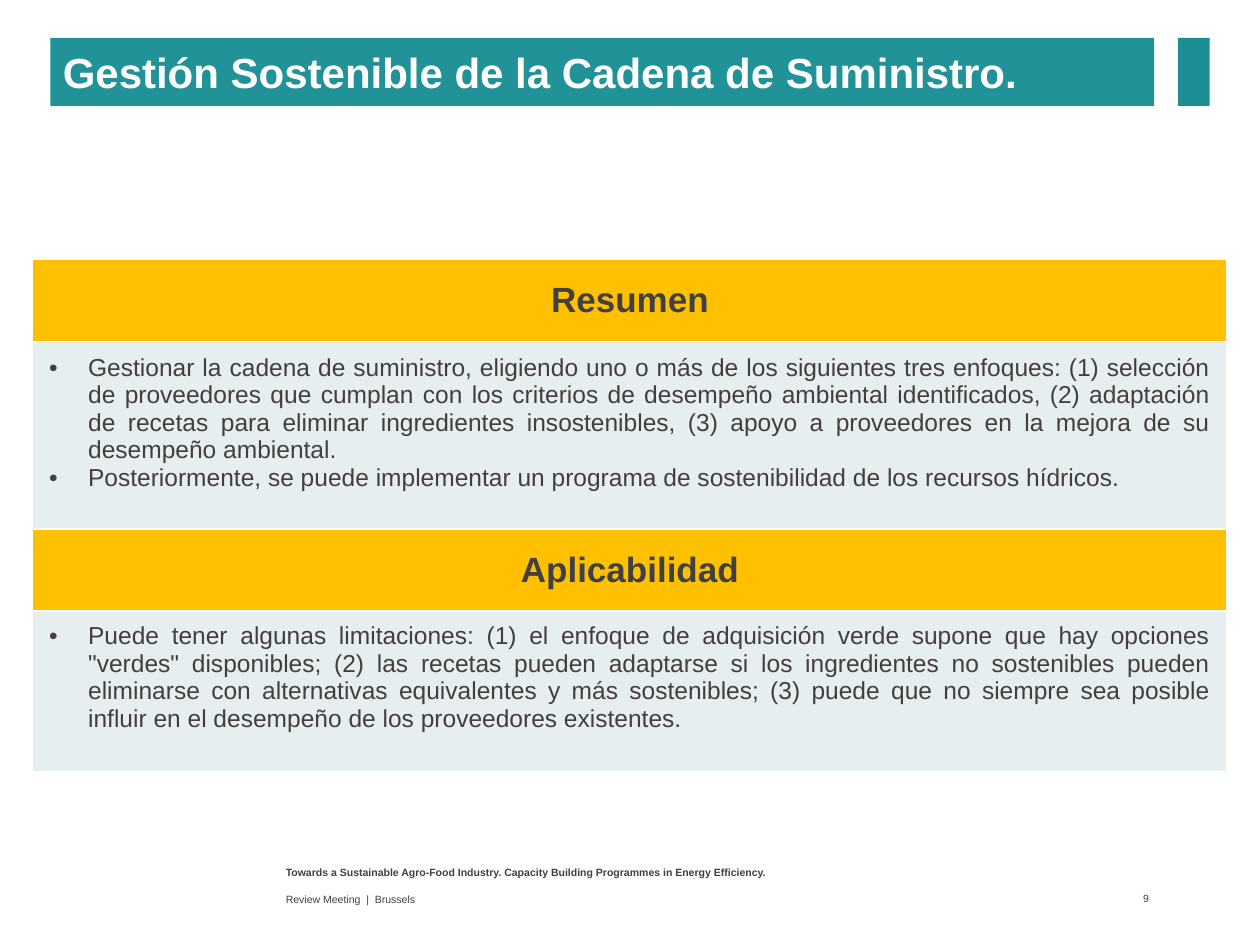
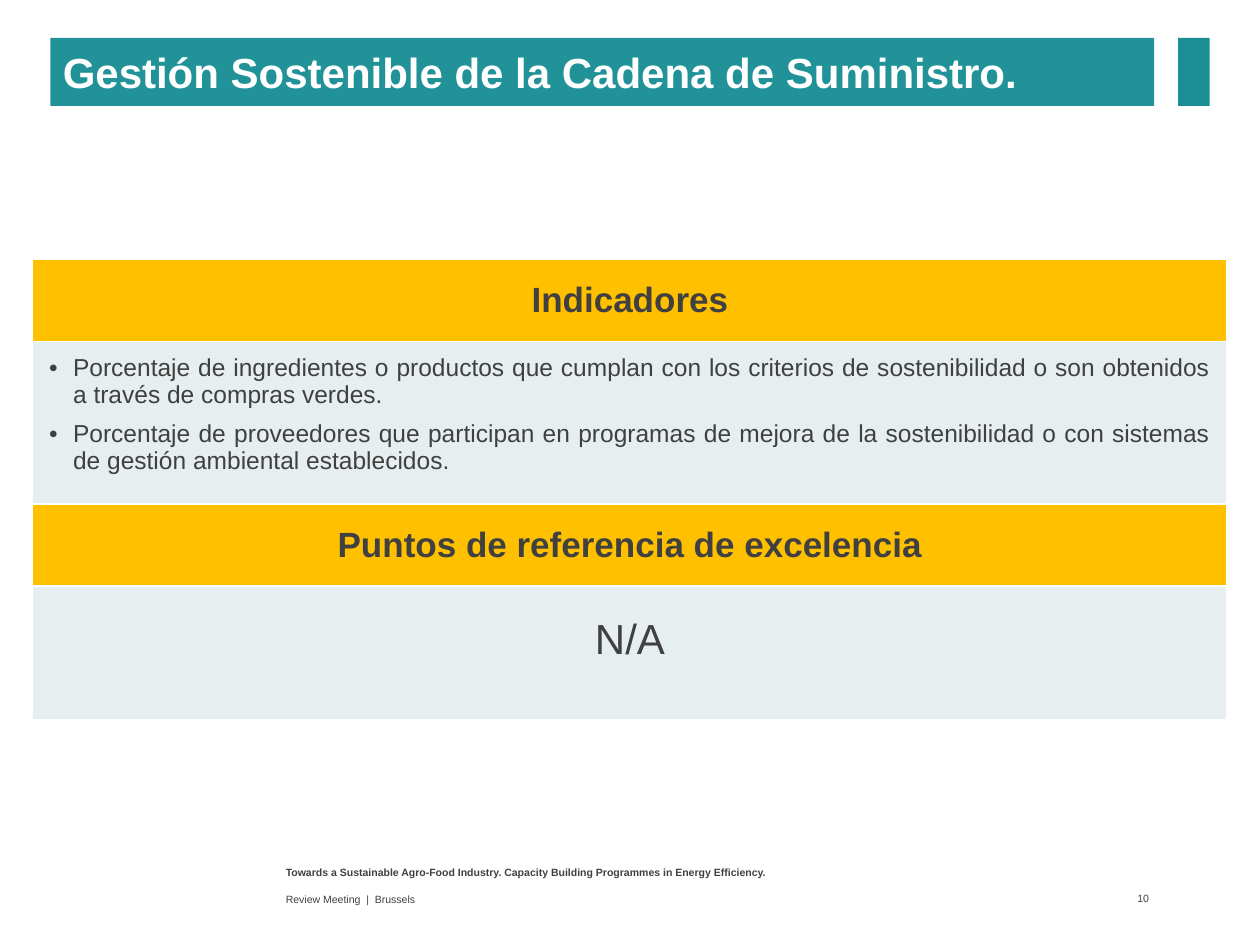
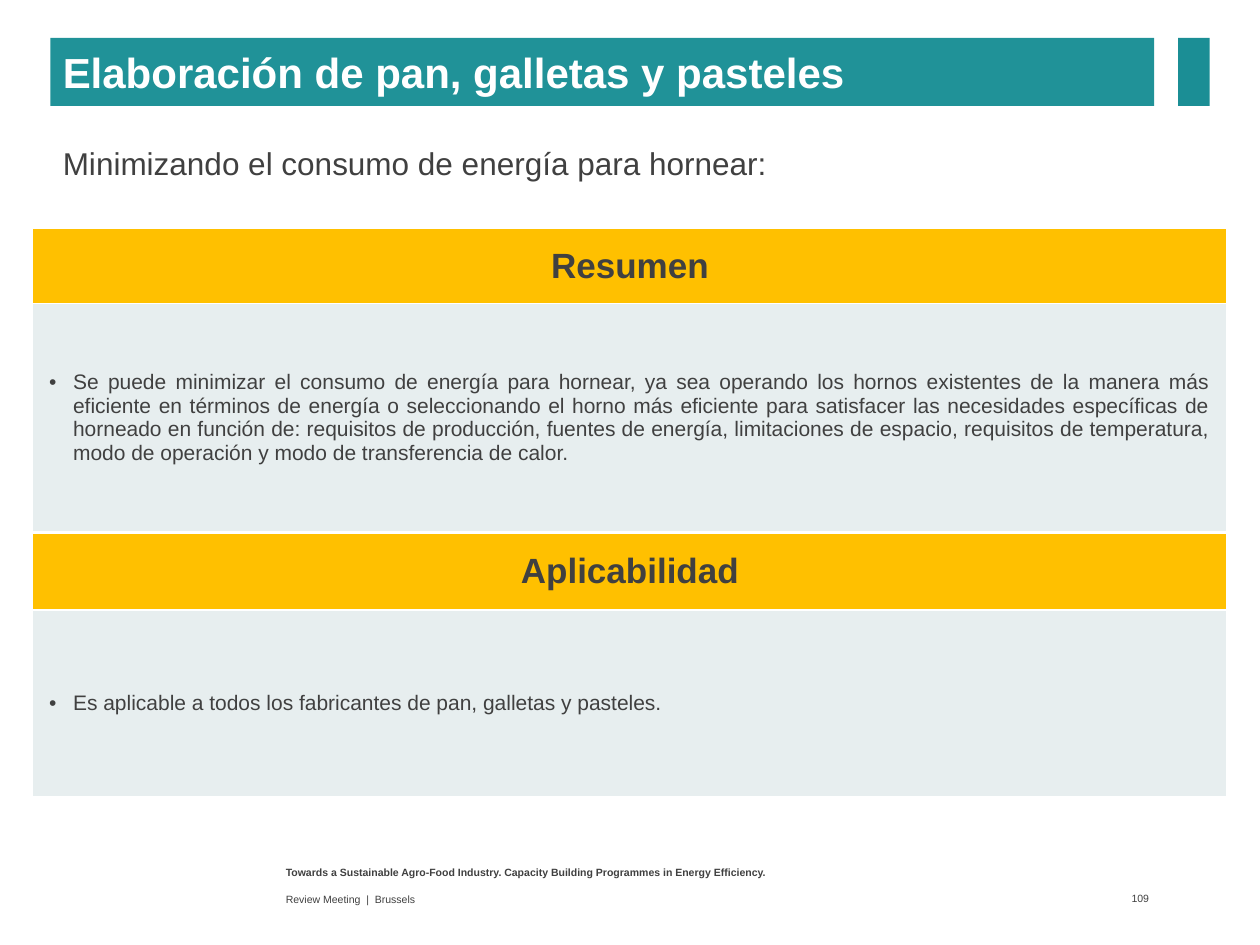
"""Build three slides on best environmental practices for the food industry."""
from dataclasses import dataclass

from lxml import etree
from pptx import Presentation
from pptx.dml.color import RGBColor
from pptx.enum.shapes import MSO_SHAPE
from pptx.enum.text import MSO_ANCHOR, PP_ALIGN
from pptx.oxml.ns import qn
from pptx.util import Inches, Pt

RECT = MSO_SHAPE.RECTANGLE
TOP, MIDDLE = MSO_ANCHOR.TOP, MSO_ANCHOR.MIDDLE
LEFT, CENTER, RIGHT, JUSTIFY = PP_ALIGN.LEFT, PP_ALIGN.CENTER, PP_ALIGN.RIGHT, PP_ALIGN.JUSTIFY


@dataclass(frozen=True)
class Theme:
    font: str = "Arial"
    text: str = "404040"
    white: str = "FFFFFF"
    band: str = "209298"
    accent: str = "1B8E95"
    heading_fill: str = "FFC000"
    body_fill: str = "E7EEEF"
    title_size: int = 24
    heading_size: int = 20
    subtitle_size: int = 18
    footer_size: int = 6


THEME = Theme()
TABLE_LEFT, TABLE_WIDTH = 0.26, 9.48
PROJECT = "Towards a Sustainable Agro-Food Industry. Capacity Building Programmes in Energy Efficiency."
MEETING = "Review Meeting  |  Brussels"
SUPPLY_TITLE = "Gestión Sostenible de la Cadena de Suministro."

SLIDES = [
    {
        "number": "9",
        "title": SUPPLY_TITLE,
        "tables": [
            {
                "heading": "Resumen", "top": 2.06, "rows": (0.65, 1.43),
                "size": 14, "indent": 0.31, "after": 0, "gap": 0.22,
                "body": [
                    "Gestionar la cadena de suministro, eligiendo uno o más de los siguientes tres "
                    "enfoques: (1) selección de proveedores que cumplan con los criterios de desempeño "
                    "ambiental identificados, (2) adaptación de recetas para eliminar ingredientes "
                    "insostenibles, (3) apoyo a proveedores en la mejora de su desempeño ambiental.",
                    "Posteriormente, se puede implementar un programa de sostenibilidad de los "
                    "recursos hídricos.",
                ],
            },
            {
                "heading": "Aplicabilidad", "top": 4.2, "rows": (0.65, 1.21),
                "size": 14, "indent": 0.31, "after": 0, "gap": 0.22,
                "body": [
                    "Puede tener algunas limitaciones: (1) el enfoque de adquisición verde supone que "
                    "hay opciones \"verdes\" disponibles; (2) las recetas pueden adaptarse si los "
                    "ingredientes no sostenibles pueden eliminarse con alternativas equivalentes y más "
                    "sostenibles; (3) puede que no siempre sea posible influir en el desempeño de los "
                    "proveedores existentes.",
                ],
            },
        ],
    },
    {
        "number": "10",
        "title": SUPPLY_TITLE,
        "tables": [
            {
                "heading": "Indicadores", "top": 2.06, "rows": (0.65, 1.46),
                "size": 14, "indent": 0.19, "after": 6, "gap": 0.3,
                "body": [
                    "Porcentaje de ingredientes o productos que cumplan con los criterios de "
                    "sostenibilidad o son obtenidos a través de compras verdes.",
                    "Porcentaje de proveedores que participan en programas de mejora de la "
                    "sostenibilidad o con sistemas de gestión ambiental establecidos.",
                ],
            },
            {
                "heading": "Puntos de referencia de excelencia", "top": 4, "rows": (0.65, 1.06),
                "size": 24, "indent": 0, "after": 0, "gap": 0.21,
                "body": ["N/A"],
            },
        ],
    },
    {
        "number": "109",
        "title": "Elaboración de pan, galletas y pasteles",
        "subtitle": "Minimizando el consumo de energía para hornear:",
        "tables": [
            {
                "heading": "Resumen", "top": 1.81, "rows": (0.6, 1.81),
                "size": 12, "indent": 0.19, "after": 0, "gap": 0,
                "body": [
                    "Se puede minimizar el consumo de energía para hornear, ya sea operando los hornos "
                    "existentes de la manera más eficiente en términos de energía o seleccionando el "
                    "horno más eficiente para satisfacer las necesidades específicas de horneado en "
                    "función de: requisitos de producción, fuentes de energía, limitaciones de espacio, "
                    "requisitos de temperatura, modo de operación y modo de transferencia de calor.",
                ],
            },
            {
                "heading": "Aplicabilidad", "top": 4.23, "rows": (0.61, 1.48),
                "size": 12, "indent": 0.19, "after": 0, "gap": 0,
                "body": ["Es aplicable a todos los fabricantes de pan, galletas y pasteles."],
            },
        ],
    },
]


def format_paragraph(p, size, color=THEME.text, bold=False, align=LEFT):
    p.alignment = align
    for r in p.runs:
        r.font.name = THEME.font
        r.font.size = Pt(size)
        r.font.bold = bold
        r.font.color.rgb = RGBColor.from_string(color)


def write(sp, text, size, color=THEME.text, bold=False, align=LEFT, anchor=MIDDLE):
    tf = sp.text_frame
    tf.word_wrap = True
    tf.vertical_anchor = anchor
    tf.text = text
    format_paragraph(tf.paragraphs[0], size, color, bold, align)
    return tf


def add_text(s, box, text, size, **style):
    return write(s.shapes.add_textbox(*map(Inches, box)), text, size, **style)


def add_band(s, box, fill):
    sp = s.shapes.add_shape(RECT, *map(Inches, box))
    sp.shadow.inherit = False
    sp.fill.solid()
    sp.fill.fore_color.rgb = RGBColor.from_string(fill)
    sp.line.fill.background()
    return sp


def add_bullet(p, indent):
    pPr = p._p.get_or_add_pPr()
    pPr.set("marL", str(Inches(indent)))
    pPr.set("indent", str(-Inches(indent)))
    etree.SubElement(pPr, qn("a:buFont")).set("typeface", THEME.font)
    etree.SubElement(pPr, qn("a:buChar")).set("char", "•")


def style_cell(cell, fill, margins):
    tcPr = cell._tc.get_or_add_tcPr()
    for side in ("lnL", "lnR", "lnT", "lnB"):
        ln = etree.SubElement(tcPr, qn(f"a:{side}"), w=str(Pt(1)))
        solid = etree.SubElement(ln, qn("a:solidFill"))
        etree.SubElement(solid, qn("a:srgbClr")).set("val", THEME.white)
    cell.fill.solid()
    cell.fill.fore_color.rgb = RGBColor.from_string(fill)
    cell.vertical_anchor = MIDDLE
    cell.margin_left, cell.margin_top, cell.margin_right, cell.margin_bottom = map(Inches, margins)


def add_section(s, section):
    rows = section["rows"]
    box = (TABLE_LEFT, section["top"], TABLE_WIDTH, sum(rows))
    table = s.shapes.add_table(len(rows), 1, *map(Inches, box)).table
    table.first_row = table.horz_banding = False
    for row, height in zip(table.rows, rows):
        row.height = Inches(height)

    heading, body = table.cell(0, 0), table.cell(1, 0)
    style_cell(heading, THEME.heading_fill, (0.1, 0.05, 0.1, 0.05))
    heading.text_frame.text = section["heading"]
    format_paragraph(heading.text_frame.paragraphs[0], THEME.heading_size, bold=True, align=CENTER)

    style_cell(body, THEME.body_fill, (0.13, 0.06, 0.13, 0.06 + section["gap"]))
    body.text_frame.text = "\n".join(section["body"])
    for p in body.text_frame.paragraphs:
        if section["indent"]:
            add_bullet(p, section["indent"])
        p.space_after = Pt(section["after"])
        format_paragraph(p, section["size"], align=JUSTIFY if section["indent"] else CENTER)


def add_frame(s, title, number):
    add_text(s, (2.17, 6.82, 5.5, 0.21), PROJECT, THEME.footer_size, bold=True, anchor=TOP)
    add_text(s, (2.17, 7.04, 5.5, 0.19), MEETING, THEME.footer_size)
    tf = add_text(s, (8.6, 7.03, 0.56, 0.2), number, THEME.footer_size, align=RIGHT)
    tf.margin_right = Inches(0.04)
    band = add_band(s, (0.4, 0.3, 8.76, 0.54), THEME.band)
    write(band, title, THEME.title_size, THEME.white, bold=True)
    add_band(s, (9.35, 0.3, 0.25, 0.54), THEME.accent)


def main():
    prs = Presentation()
    prs.slide_width, prs.slide_height = Inches(10), Inches(7.5)
    for content in SLIDES:
        s = prs.slides.add_slide(prs.slide_layouts[6])
        add_frame(s, content["title"], content["number"])
        if "subtitle" in content:
            add_text(s, (0.4, 1.09, 9.19, 0.4), content["subtitle"], THEME.subtitle_size)
        for section in content["tables"]:
            add_section(s, section)
    prs.save("out.pptx")


if __name__ == "__main__":
    main()
